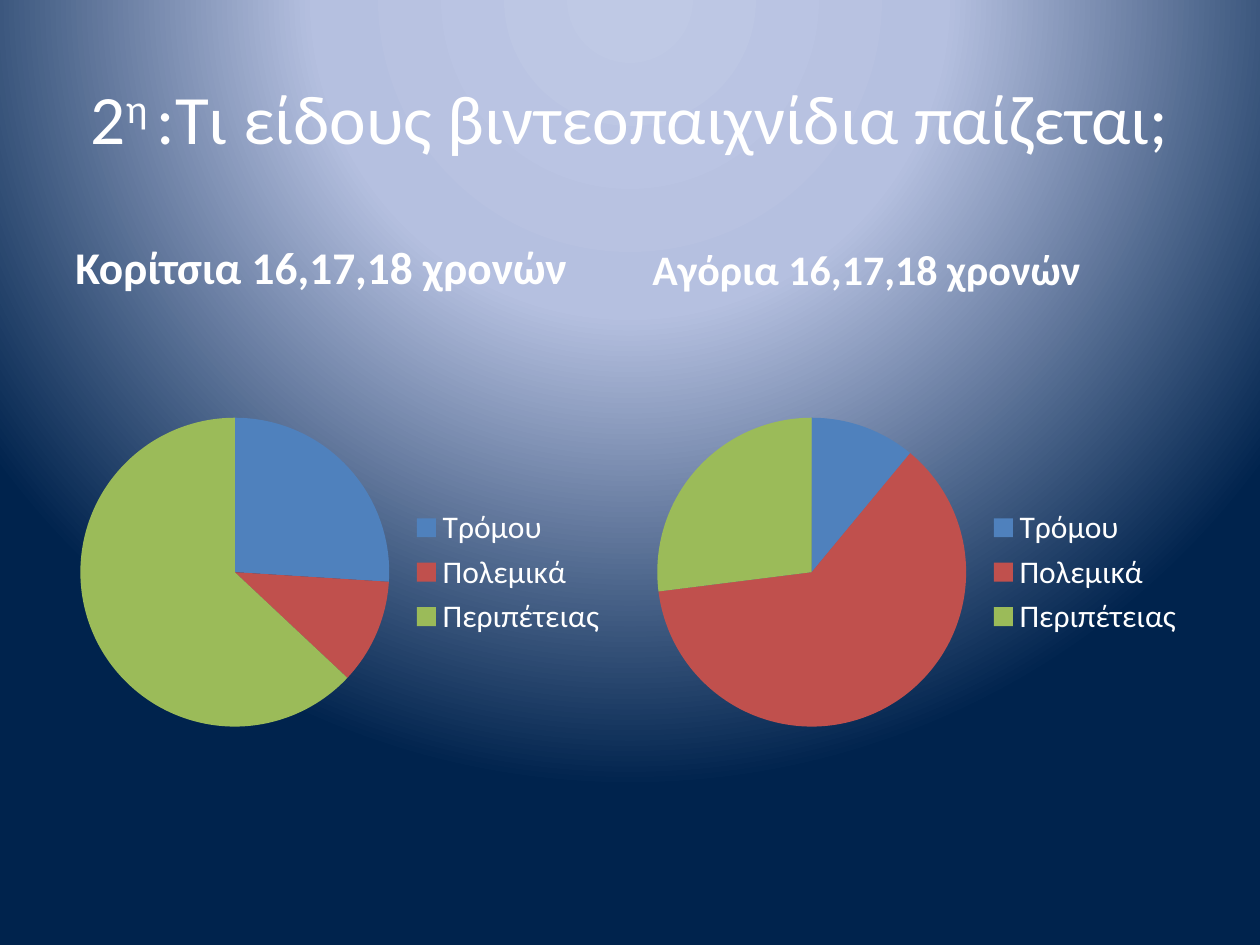
from dataclasses import dataclass

from lxml.etree import SubElement
from pptx import Presentation
from pptx.chart.data import CategoryChartData
from pptx.dml.color import RGBColor
from pptx.enum.chart import XL_CHART_TYPE, XL_LEGEND_POSITION
from pptx.enum.text import MSO_ANCHOR, PP_ALIGN
from pptx.oxml.ns import qn
from pptx.util import Cm, Pt


@dataclass(frozen=True)
class Theme:
    font: str = "Calibri"
    text: str = "FFFFFF"
    slices: tuple = ("4F81BD", "C0504D", "9BBB59")
    glow: tuple = ((0, "BFC9E5"), (40, "B5C0E0"), (100, "00234D"))
    title: float = 39.6
    girls: float = 25.9
    boys: float = 24
    legend: float = 18


THEME = Theme()
KINDS = ("Τρόμου", "Πολεμικά", "Περιπέτειας")
GROUPS = (
    ("Κορίτσια 16,17,18 χρονών", THEME.girls, (26, 11, 63)),
    ("Αγόρια 16,17,18 χρονών", THEME.boys, (11, 62, 27)),
)


def style_font(font, size, bold=False):
    font.name, font.size, font.bold = THEME.font, Pt(size), bold
    font.color.rgb = RGBColor.from_string(THEME.text)


def add_text(s, box, runs, size, bold=False, align=PP_ALIGN.LEFT,
             anchor=MSO_ANCHOR.MIDDLE, before=0):
    """Add one paragraph; runs are (text, baseline in percent) pairs."""
    tf = s.shapes.add_textbox(*map(Cm, box)).text_frame
    tf.word_wrap = True
    tf.vertical_anchor = anchor
    p = tf.paragraphs[0]
    p.alignment, p.space_before = align, Pt(before)
    for text, baseline in runs:
        r = p.add_run()
        r.text = text
        style_font(r.font, size, bold)
        if baseline:
            r.font._element.set("baseline", str(baseline * 1000))


def add_background(s):
    """Radial glow centred above the top edge."""
    s.background.fill.gradient()
    grad = s.element.find(".//" + qn("a:gradFill"))
    for child in list(grad):
        grad.remove(child)
    stops = SubElement(grad, qn("a:gsLst"))
    for pos, color in THEME.glow:
        stop = SubElement(stops, qn("a:gs"), pos=str(pos * 1000))
        SubElement(stop, qn("a:srgbClr"), val=color)
    circle = SubElement(grad, qn("a:path"), {"path": "circle"})
    SubElement(circle, qn("a:fillToRect"), l="50000", t="-80000", r="50000", b="180000")


def add_title(s, box):
    runs = (("2", 0), ("η ", 30), (":Τι είδους βιντεοπαιχνίδια παίζεται;", 0))
    add_text(s, box, runs, THEME.title, align=PP_ALIGN.CENTER)


def add_pie(s, box, values):
    data = CategoryChartData()
    data.categories = KINDS
    data.add_series("Series 1", values)
    chart = s.shapes.add_chart(XL_CHART_TYPE.PIE, *map(Cm, box), data).chart
    style_font(chart.font, THEME.legend)
    chart.has_title = False
    chart.has_legend = True
    chart.legend.position = XL_LEGEND_POSITION.RIGHT
    chart.legend.include_in_layout = False
    plot = chart.plots[0]
    plot.vary_by_categories = True
    for i, color in enumerate(THEME.slices):
        fill = plot.series[0].points[i].format.fill
        fill.solid()
        fill.fore_color.rgb = RGBColor.from_string(color)


def add_group(s, box, heading, size, values):
    """Heading above the pie of one group."""
    left, top, width, height = box
    head = 1.78
    add_text(s, (left, top, width, head), ((heading, 0),), size, bold=True,
             anchor=MSO_ANCHOR.BOTTOM, before=size * 0.2)
    add_pie(s, (left, top + head, width, height - head), values)


def main():
    prs = Presentation()
    prs.slide_width, prs.slide_height = Cm(25.4), Cm(19.05)
    s = prs.slides.add_slide(prs.slide_layouts[6])
    margin, content, gap = 1.27, 22.86, 0.4
    width = (content - gap) / 2

    add_background(s)
    add_title(s, (margin, 0.76, content, 3.18))
    for i, group in enumerate(GROUPS):
        add_group(s, (margin + i * (width + gap), 4.27, width, 12.75), *group)
    prs.save("out.pptx")


if __name__ == "__main__":
    main()
